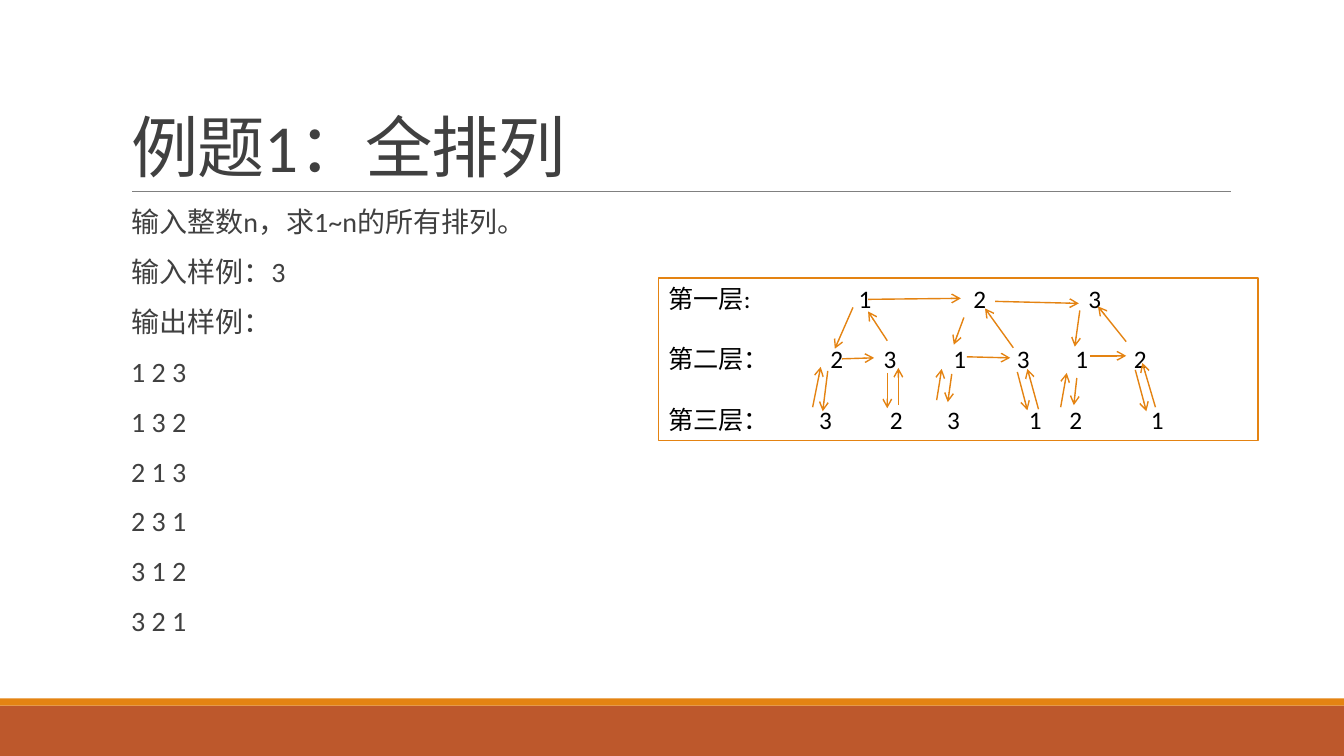
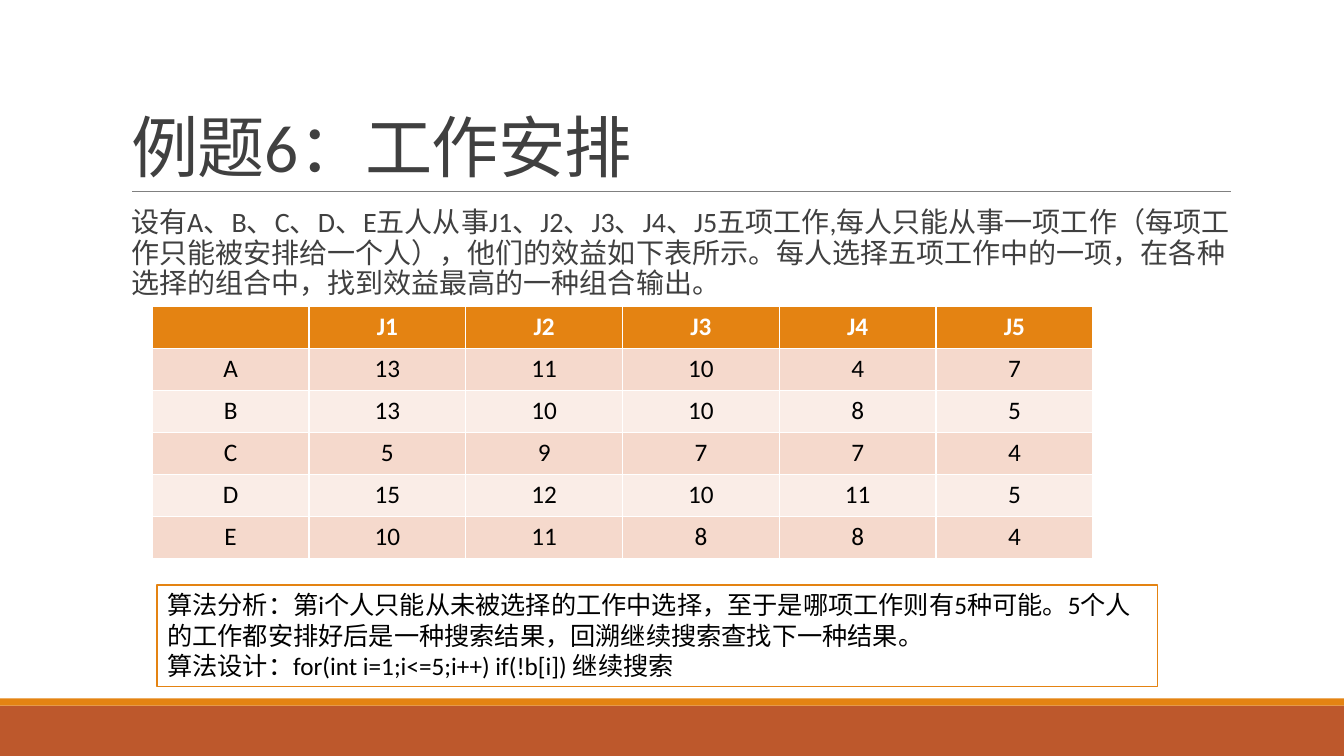
import pptx
import pptx.dml.color
import pptx.enum.shapes
import pptx.enum.text
import pptx.oxml
import pptx.oxml.ns
import pptx.util
from pptx.dml.color import RGBColor
from pptx.util import Inches, Pt

ORANGE = RGBColor(0xE4, 0x83, 0x12)
RUST = RGBColor(0xBD, 0x58, 0x2C)
GRAY = RGBColor(0x80, 0x80, 0x80)
DARK = RGBColor(0x40, 0x40, 0x40)
BLACK = RGBColor(0, 0, 0)
WHITE = RGBColor(0xFF, 0xFF, 0xFF)
PINK = RGBColor(0xF5, 0xD9, 0xCC)
PALE = RGBColor(0xFA, 0xED, 0xE7)

ALIGN = pptx.enum.text.PP_ALIGN
ANCHOR = pptx.enum.text.MSO_ANCHOR
SHAPE = pptx.enum.shapes.MSO_SHAPE
STRAIGHT = pptx.enum.shapes.MSO_CONNECTOR.STRAIGHT

PERMUTATIONS = ["1 2 3", "1 3 2", "2 1 3", "2 3 1", "3 1 2", "3 2 1"]

TREE_LEVELS = [
    ("第一层:", "123", [1.95, 3.09, 4.23]),
    ("第二层：", "231312", [1.67, 2.2, 2.89, 3.52, 4.1, 4.68]),
    ("第三层：", "323121", [1.56, 2.26, 2.83, 3.64, 4.04, 4.85]),
]

TREE_ARROWS = [
    (8.46, 3.05, 8.28, 3.46), (8.21, 3.68, 8.16, 4.08),
    (8.06, 4.04, 8.14, 3.64), (8.35, 3.56, 8.67, 3.55),
    (8.8, 3.7, 8.8, 4.05), (8.91, 4.02, 8.91, 3.65),
    (8.8, 3.38, 8.61, 3.09), (8.61, 2.97, 9.53, 2.96),
    (9.56, 3.15, 9.46, 3.42), (9.44, 3.71, 9.4, 3.99),
    (9.29, 3.97, 9.34, 3.66), (9.59, 3.54, 10.02, 3.55),
    (10.09, 3.69, 10.19, 4.07), (10.3, 4.06, 10.19, 3.66),
    (10.05, 3.45, 9.77, 3.06), (9.87, 2.99, 10.7, 3.01),
    (10.71, 3.08, 10.66, 3.44), (10.68, 3.75, 10.65, 4.02),
    (10.52, 4.04, 10.58, 3.7), (10.81, 3.53, 11.17, 3.53),
    (11.26, 3.67, 11.37, 4.08), (11.46, 4.04, 11.33, 3.6),
    (11.17, 3.39, 10.89, 3.04),
]

BENEFITS = [
    ["", "J1", "J2", "J3", "J4", "J5"],
    ["A", 13, 11, 10, 4, 7],
    ["B", 13, 10, 10, 8, 5],
    ["C", 5, 9, 7, 7, 4],
    ["D", 15, 12, 10, 11, 5],
    ["E", 10, 11, 8, 8, 4],
]


def add_xml(parent, tag, **attributes):
    child = pptx.oxml.parse_xml(f"<{tag} {pptx.oxml.ns.nsdecls('a')}/>")
    for name, value in attributes.items():
        child.set(name, str(value))
    parent.append(child)
    return child


class Lesson:
    font = "Calibri"

    def __init__(self):
        self.deck = pptx.Presentation()
        self.deck.slide_width = Inches(13.33)
        self.deck.slide_height = Inches(7.5)
        self.page = None

    def style(self, para, size, color, bold=False, align=ALIGN.LEFT):
        para.alignment = align
        para.font.name = self.font
        para.font.size = Pt(size)
        para.font.color.rgb = color
        para.font.bold = bold

    def place(self, shape, left, top, width, height):
        shape.left, shape.top = Inches(left), Inches(top)
        shape.width, shape.height = Inches(width), Inches(height)

    def add_page(self, title):
        self.page = self.deck.slides.add_slide(self.deck.slide_layouts[1])
        self.rectangle(0, 7, 13.33, 0.5, RUST)
        self.rectangle(0, 6.93, 13.33, 0.07, ORANGE)
        self.line(1.31, 1.9, 12.21, 1.9, GRAY, 0.5)
        heading = self.page.shapes.title
        self.place(heading, 1.2, 0.31, 11, 1.59)
        frame = heading.text_frame
        frame.text = title
        frame.vertical_anchor = ANCHOR.BOTTOM
        frame.auto_size = pptx.enum.text.MSO_AUTO_SIZE.NONE
        para = frame.paragraphs[0]
        para.line_spacing = 0.85
        self.style(para, 48, DARK)
        para.font._element.set("spc", "-50")

    def body(self, lines, height):
        holder = self.page.placeholders[1]
        self.place(holder, 1.2, 2.02, 11, height)
        frame = holder.text_frame
        frame.text = "\n".join(lines)
        frame.margin_left = frame.margin_right = 0
        frame.auto_size = pptx.enum.text.MSO_AUTO_SIZE.NONE
        for para in frame.paragraphs:
            properties = para._p.get_or_add_pPr()
            properties.set("marL", str(Inches(0.1)))
            properties.set("indent", "0")
            add_xml(properties, "a:buNone")
            para.line_spacing = 0.9
            para.space_before = Pt(12)
            para.space_after = Pt(2)
            self.style(para, 20, DARK)

    def rectangle(self, left, top, width, height, fill, outline=None):
        box = self.page.shapes.add_shape(
            SHAPE.RECTANGLE, Inches(left), Inches(top), Inches(width), Inches(height))
        box.shadow.inherit = False
        box.fill.solid()
        box.fill.fore_color.rgb = fill
        if outline is None:
            box.line.fill.background()
        else:
            box.line.color.rgb = outline
            box.line.width = Pt(1.25)
        return box

    def text_box(self, lines, left, top, width, height):
        box = self.rectangle(left, top, width, height, WHITE, ORANGE)
        frame = box.text_frame
        frame.word_wrap = True
        frame.vertical_anchor = ANCHOR.TOP
        frame.text = "\n".join(lines)
        for para in frame.paragraphs:
            self.style(para, 18, BLACK)
        return frame

    def tree_box(self, levels, left, top, width, height):
        lines = ["\t".join([label, *digits]) for label, digits, _ in levels]
        frame = self.text_box(lines, left, top, width, height)
        for para, (_, _, stops) in zip(frame.paragraphs, levels):
            para.space_before = Pt(21.7)
            properties = para._p.get_or_add_pPr()
            tabs = add_xml(properties, "a:tabLst")
            for stop in stops:
                add_xml(tabs, "a:tab", pos=Inches(stop), algn="ctr")
            properties.find(pptx.oxml.ns.qn("a:defRPr")).addprevious(tabs)
        frame.paragraphs[0].space_before = Pt(0)

    def line(self, x1, y1, x2, y2, color, width):
        connector = self.page.shapes.add_connector(
            STRAIGHT, Inches(x1), Inches(y1), Inches(x2), Inches(y2))
        connector.line.color.rgb = color
        connector.line.width = Pt(width)
        add_xml(connector._element.spPr, "a:effectLst")
        return connector

    def arrow(self, x1, y1, x2, y2):
        connector = self.line(x1, y1, x2, y2, ORANGE, 1)
        add_xml(connector.line._get_or_add_ln(), "a:tailEnd", type="arrow")

    def table(self, rows, left, top, width, height):
        table = self.page.shapes.add_table(
            len(rows), len(rows[0]), Inches(left), Inches(top),
            Inches(width), Inches(height)).table
        for row_index, row in enumerate(rows):
            header = row_index == 0
            fill = ORANGE if header else PINK if row_index % 2 else PALE
            for column_index, value in enumerate(row):
                cell = table.cell(row_index, column_index)
                cell.text = str(value)
                cell.fill.solid()
                cell.fill.fore_color.rgb = fill
                self.style(cell.text_frame.paragraphs[0], 18,
                           WHITE if header else BLACK, header, ALIGN.CENTER)


def main():
    lesson = Lesson()

    lesson.add_page("例题1：全排列")
    lesson.body(["输入整数n，求1~n的所有排列。", "输入样例：3", "输出样例：",
                 *PERMUTATIONS], 4.4)
    lesson.tree_box(TREE_LEVELS, 6.53, 2.76, 5.95, 1.61)
    for ends in TREE_ARROWS:
        lesson.arrow(*ends)

    lesson.add_page("例题6：工作安排")
    lesson.body(["设有A、B、C、D、E五人从事J1、J2、J3、J4、J5五项工作,每人只能从事一项工作"
                 "（每项工作只能被安排给一个人），他们的效益如下表所示。每人选择五项工作中的一项，"
                 "在各种选择的组合中，找到效益最高的一种组合输出。"], 4.89)
    lesson.table(BENEFITS, 1.51, 3.04, 9.33, 2.5)
    lesson.text_box(["算法分析：第i个人只能从未被选择的工作中选择，至于是哪项工作则有5种可能。"
                     "5个人的工作都安排好后是一种搜索结果，回溯继续搜索查找下一种结果。",
                     "算法设计：for(int i=1;i<=5;i++) if(!b[i]) 继续搜索"],
                    1.56, 5.8, 9.92, 1.01)

    lesson.deck.save("out.pptx")


if __name__ == "__main__":
    main()
